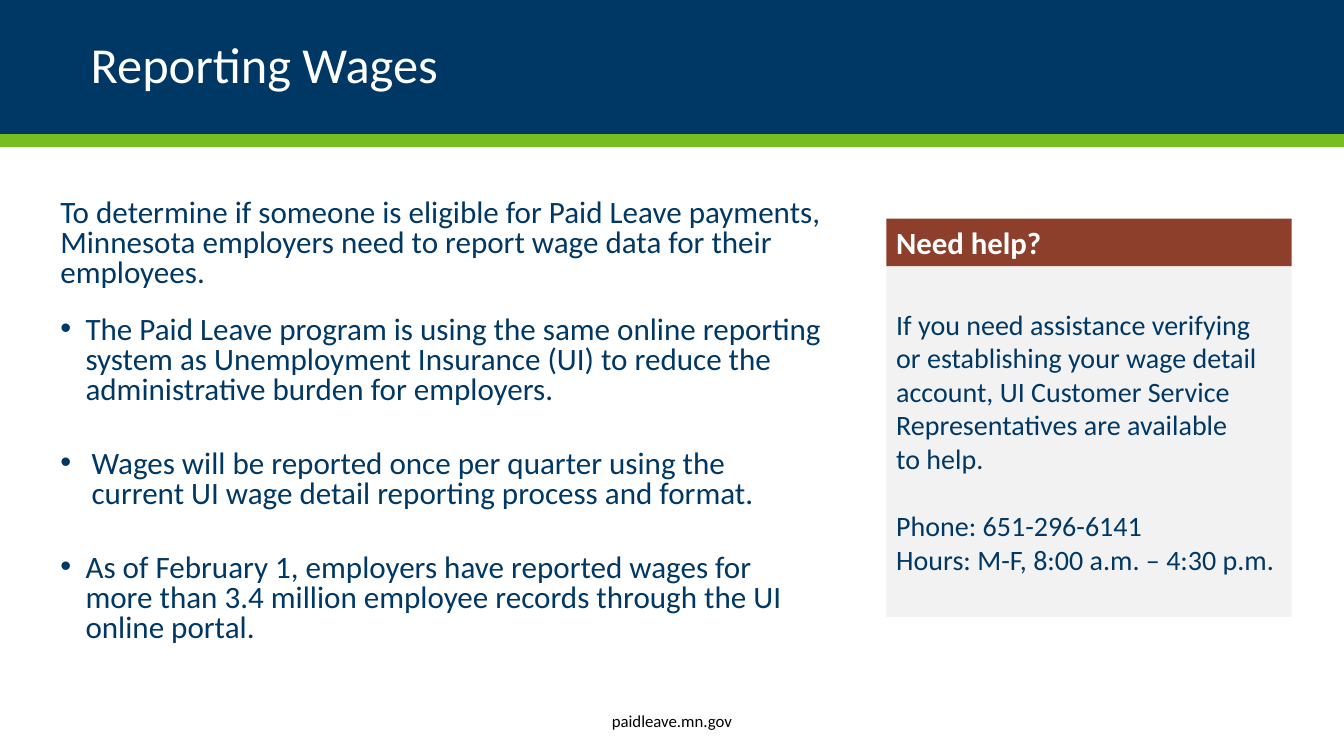
from dataclasses import dataclass

from lxml import etree
from pptx import Presentation
from pptx import util as u
from pptx.dml.color import RGBColor
from pptx.enum import shapes, text
from pptx.oxml.ns import qn


@dataclass(frozen=True)
class Theme:
    font: str = "Calibri"
    navy: str = "003865"
    green: str = "78BE21"
    rust: str = "8D3F2B"
    gray: str = "F2F2F2"
    white: str = "FFFFFF"
    black: str = "000000"
    title: float = 36
    body: float = 22.2
    heading: float = 22
    panel: float = 20
    footer: float = 12


class SlideBuilder:
    def __init__(self, deck, theme):
        self.theme = theme
        self.page = deck.slides.add_slide(deck.slide_layouts[5])

    def apply(self, target, values):
        for name, value in values.items():
            setattr(target, name, value)

    def fill(self, shape, color):
        shape.fill.solid()
        shape.fill.fore_color.rgb = RGBColor.from_string(color)

    def bullet(self, para, indent):
        props = para._p.get_or_add_pPr()
        props.set("marL", str(u.Inches(indent)))
        props.set("indent", str(-u.Inches(indent)))
        etree.SubElement(props, qn("a:buFont"), typeface="Arial")
        etree.SubElement(props, qn("a:buChar"), char="•")

    def set_text(self, shape, paragraphs, size, color, bold=False,
                 align=text.PP_ALIGN.LEFT, spacing=1.0, frame_format=None):
        frame = shape.text_frame
        self.apply(frame, {"word_wrap": True, "auto_size": text.MSO_AUTO_SIZE.NONE,
                           **(frame_format or {})})
        for index, (content, before, after, indent) in enumerate(paragraphs):
            para = frame.add_paragraph() if index else frame.paragraphs[0]
            para.text = content
            self.apply(para, {"alignment": align, "line_spacing": spacing,
                              "space_before": u.Pt(before), "space_after": u.Pt(after)})
            if indent:
                self.bullet(para, indent)
            for span in para.runs:
                self.apply(span.font, {"name": self.theme.font, "size": u.Pt(size),
                                       "bold": bold})
                span.font.color.rgb = RGBColor.from_string(color)

    def title(self, content, area):
        shape = self.page.shapes.title
        self.apply(shape, dict(zip(("left", "top", "width", "height"), map(u.Inches, area))))
        self.fill(shape, self.theme.navy)
        self.set_text(shape, [(content, 0, 0, 0)], self.theme.title, self.theme.white,
                      spacing=0.9, frame_format={
                          "vertical_anchor": text.MSO_ANCHOR.MIDDLE,
                          "margin_left": u.Inches(0.9), "margin_right": u.Inches(0.9)})

    def block(self, area, color):
        shape = self.page.shapes.add_shape(shapes.MSO_SHAPE.RECTANGLE, *map(u.Inches, area))
        shape.shadow.inherit = False
        self.fill(shape, color)
        shape.line.fill.background()
        return shape

    def text_box(self, area, paragraphs, size, color, **options):
        box = self.page.shapes.add_textbox(*map(u.Inches, area))
        self.set_text(box, paragraphs, size, color, **options)


def main():
    deck = Presentation()
    deck.slide_width, deck.slide_height = u.Inches(13.33), u.Inches(7.5)
    theme = Theme()
    slide = SlideBuilder(deck, theme)
    middle = {"vertical_anchor": text.MSO_ANCHOR.MIDDLE}

    slide.title("Reporting Wages", (0, 0, 13.33, 1.33))
    slide.block((0, 1.33, 13.33, 0.13), theme.green)

    slide.text_box((0.5, 1.93, 7.75, 4.75), [
        ("To determine if someone is eligible for Paid Leave payments, Minnesota "
         "employers need to report wage data for their employees.", 10, 10, 0),
        ("The Paid Leave program is using the same online reporting system as "
         "Unemployment Insurance (UI) to reduce the administrative burden for "
         "employers.", 10, 31.5, 0.25),
        ("Wages will be reported once per quarter using the current UI wage detail "
         "reporting process and format.", 0, 21.5, 0.31),
        ("As of February 1, employers have reported wages for more than 3.4 million "
         "employee records through the UI online portal.", 10, 10, 0.25),
    ], theme.body, theme.navy, spacing=0.8)

    panel = slide.block((8.79, 2.64, 4.02, 3.48), theme.gray)
    slide.set_text(panel, [
        ("If you need assistance verifying \vor establishing your wage detail account, "
         "UI Customer Service Representatives are available \vto help.", 0, 24, 0),
        ("Phone: 651-296-6141", 0, 0, 0),
        ("Hours: M-F, 8:00 a.m. – 4:30 p.m.", 0, 0, 0),
    ], theme.panel, theme.navy, frame_format=middle)

    heading = slide.block((8.79, 2.17, 4.02, 0.47), theme.rust)
    slide.set_text(heading, [("Need help?", 0, 0, 0)], theme.heading, theme.white,
                   bold=True, frame_format={"vertical_anchor": text.MSO_ANCHOR.TOP})

    slide.text_box((3.61, 6.95, 6.11, 0.4), [("paidleave.mn.gov", 0, 0, 0)],
                   theme.footer, theme.black, align=text.PP_ALIGN.CENTER,
                   frame_format=middle)
    deck.save("out.pptx")


if __name__ == "__main__":
    main()
